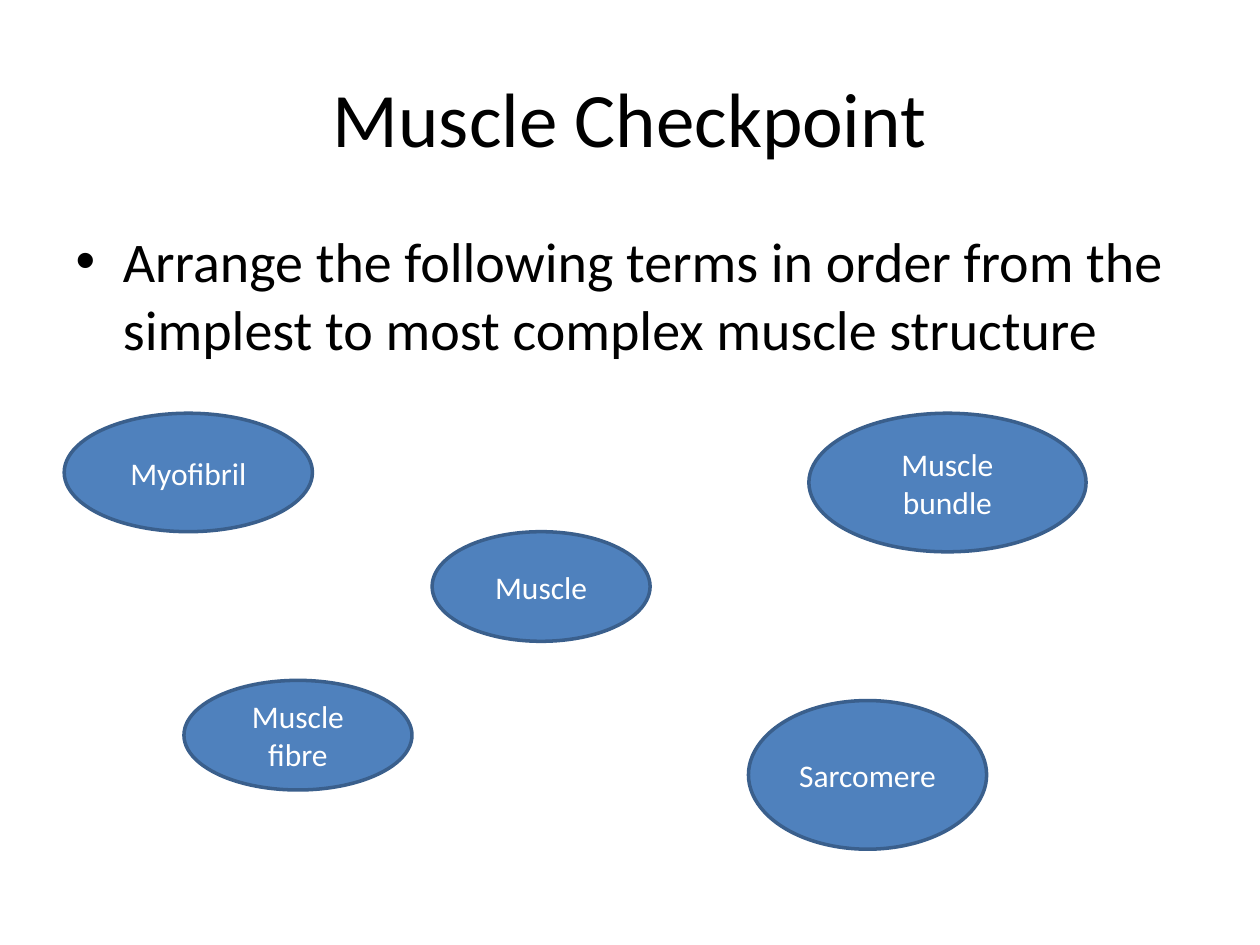
from dataclasses import dataclass

import pptx
import pptx.dml.color
import pptx.enum.shapes
import pptx.enum.text
import pptx.util

Inches = pptx.util.Inches
Align = pptx.enum.text.PP_ALIGN
Anchor = pptx.enum.text.MSO_ANCHOR


@dataclass(frozen=True)
class Theme:
    font: str = "Calibri"
    text: str = "000000"
    term_text: str = "FFFFFF"
    term_fill: str = "4F81BD"
    term_line: str = "3A5F8C"
    line_width: float = 2
    title_size: int = 44
    body_size: int = 32
    term_size: int = 18


@dataclass(frozen=True)
class Box:
    """A region of the page, in inches."""
    left: float
    top: float
    width: float
    height: float

    def inside(self, left, top, width, height):
        return Box(self.left + left, self.top + top, width, height)

    def lengths(self):
        return [Inches(v) for v in (self.left, self.top, self.width, self.height)]


THEME = Theme()

# Term, then left, top, width and height within the terms region
TERMS = [
    ("Muscle", 2.93, 0.94, 1.73, 0.87),
    ("Myofibril", 0.01, 0, 1.97, 0.94),
    ("Muscle fibre", 0.96, 2.12, 1.81, 0.87),
    ("Muscle bundle", 5.92, 0, 2.2, 1.1),
    ("Sarcomere", 5.44, 2.28, 1.89, 1.18),
]


def color(value):
    return pptx.dml.color.RGBColor.from_string(value)


def write(shape, text, size, ink, align, anchor):
    frame = shape.text_frame
    frame.text = text
    frame.word_wrap = True
    frame.vertical_anchor = anchor
    para = frame.paragraphs[0]
    para.alignment = align
    font = para.runs[0].font
    font.name = THEME.font
    font.size = pptx.util.Pt(size)
    font.color.rgb = color(ink)


def place(shape, box):
    shape.left, shape.top, shape.width, shape.height = box.lengths()


def add_title(page, box, text):
    title = page.shapes.title
    place(title, box)
    write(title, text, THEME.title_size, THEME.text, Align.CENTER, Anchor.MIDDLE)


def add_task(page, box, text):
    body = page.placeholders[1]
    place(body, box)
    write(body, text, THEME.body_size, THEME.text, Align.LEFT, Anchor.TOP)


def add_terms(page, box, terms):
    """Scatter the terms to be ordered over the region, each in an ellipse."""
    for text, *area in terms:
        ellipse = page.shapes.add_shape(
            pptx.enum.shapes.MSO_SHAPE.OVAL, *box.inside(*area).lengths())
        ellipse.shadow.inherit = False
        ellipse.fill.solid()
        ellipse.fill.fore_color.rgb = color(THEME.term_fill)
        ellipse.line.color.rgb = color(THEME.term_line)
        ellipse.line.width = pptx.util.Pt(THEME.line_width)
        write(ellipse, text, THEME.term_size, THEME.term_text,
              Align.CENTER, Anchor.MIDDLE)


def main():
    deck = pptx.Presentation()
    deck.slide_width, deck.slide_height = Inches(10), Inches(7.5)
    page = deck.slides.add_slide(deck.slide_layouts[1])
    add_title(page, Box(0.5, 0.3, 9, 1.25), "Muscle Checkpoint")
    add_task(page, Box(0.5, 1.75, 9, 4.95),
             "Arrange the following terms in order from the simplest "
             "to most complex muscle structure")
    add_terms(page, Box(0.5, 3.28, 9, 3.46), TERMS)
    deck.save("out.pptx")


if __name__ == "__main__":
    main()
